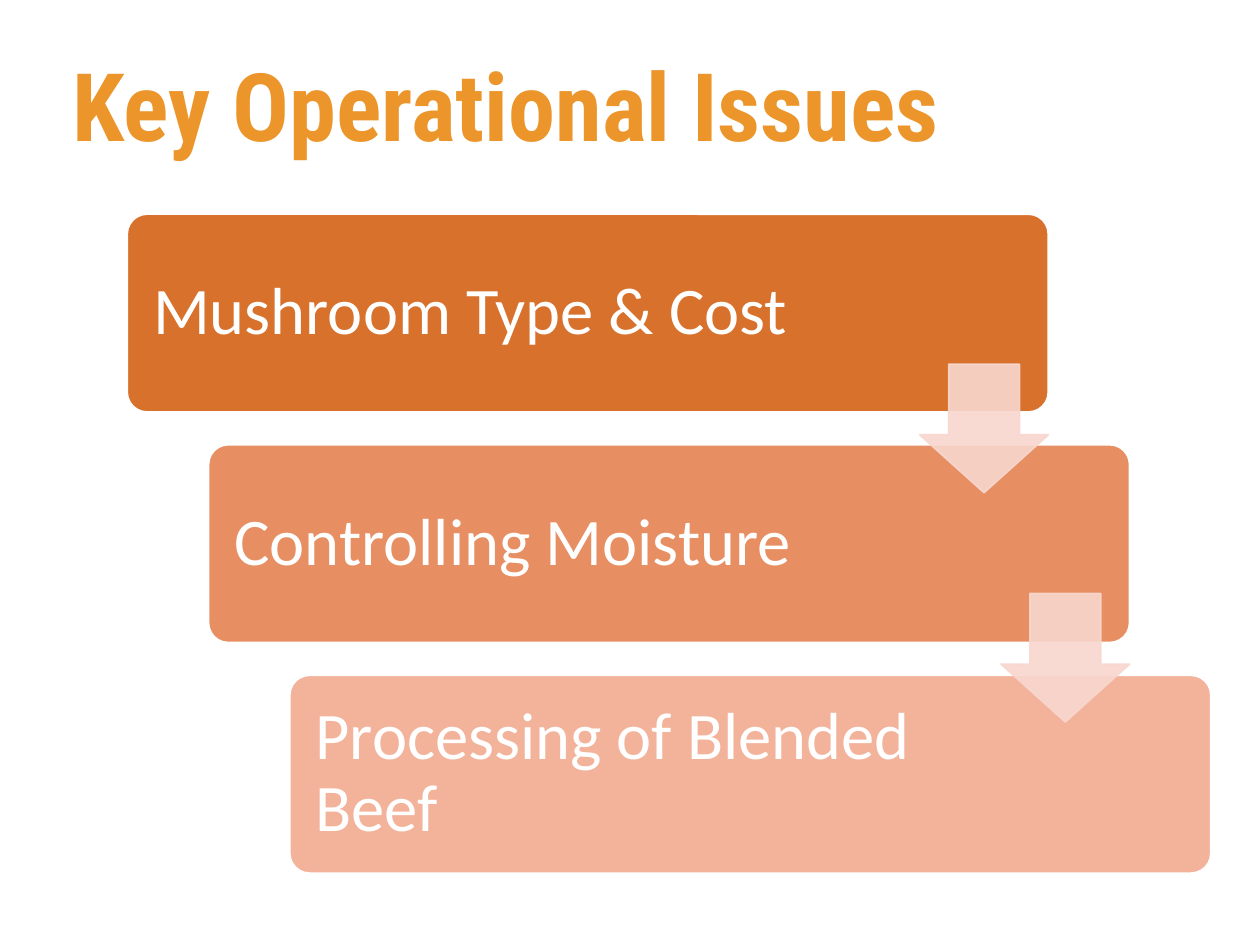
from dataclasses import dataclass

from lxml import etree
from pptx import Presentation
from pptx.dml.color import RGBColor
from pptx.enum.shapes import MSO_SHAPE
from pptx.enum.text import MSO_ANCHOR, PP_ALIGN
from pptx.oxml.ns import qn
from pptx.util import Inches, Pt

ROUND = MSO_SHAPE.ROUNDED_RECTANGLE
DOWN = MSO_SHAPE.DOWN_ARROW
MIDDLE = MSO_ANCHOR.MIDDLE
LEFT = PP_ALIGN.LEFT


@dataclass(frozen=True)
class Theme:
    title: str = "EC952A"
    text: str = "FFFFFF"
    edge: str = "FFFFFF"
    arrow: str = "F8D7CE"
    steps: tuple = ("D7712C", "E78F62", "F3B39B")
    head_font: str = "Roboto Condensed"
    body_font: str = "Calibri"
    head_size: int = 54
    body_size: int = 38


THEME = Theme()
ISSUES = ("Mushroom Type & Cost", "Controlling Moisture",
          "Processing of Blended Beef")


def add_text(slide, box, text, font, size, color, bold=False):
    frame = slide.shapes.add_textbox(*map(Inches, box)).text_frame
    frame.word_wrap = True
    frame.text = text
    para = frame.paragraphs[0]
    para.alignment = LEFT
    style = para.runs[0].font
    style.name, style.size, style.bold = font, Pt(size), bold
    style.color.rgb = RGBColor.from_string(color)
    return frame


def add_solid(slide, kind, box, fill, edge, adjust):
    shape = slide.shapes.add_shape(kind, *map(Inches, box))
    shape.shadow.inherit = False
    shape.fill.solid()
    shape.fill.fore_color.rgb = RGBColor.from_string(fill)
    shape.line.color.rgb = RGBColor.from_string(edge)
    shape.line.width = Pt(1)
    for i, value in enumerate(adjust):
        shape.adjustments[i] = value
    return shape


def add_title(slide, box):
    add_text(slide, box, "Key Operational Issues", THEME.head_font,
             THEME.head_size, THEME.title, bold=True)


def add_step(slide, box, text, fill, span):
    """Draw one card; its label takes the given width."""
    left, top, width, height = box
    add_solid(slide, ROUND, box, fill, THEME.edge, [0.1])
    pad = 0.045
    label = (left + pad, top + pad, span, height - 2 * pad)
    frame = add_text(slide, label, text, THEME.body_font,
                     THEME.body_size, THEME.text)
    frame.vertical_anchor = MIDDLE
    frame.margin_left = frame.margin_right = Inches(0.16)
    frame.margin_top = frame.margin_bottom = Inches(0.16)
    frame.paragraphs[0].line_spacing = 0.9


def add_arrow(slide, box):
    shape = add_solid(slide, DOWN, box, THEME.arrow, THEME.arrow, [0.55, 0.45])
    for color in shape._element.spPr.iter(qn("a:srgbClr")):
        etree.SubElement(color, qn("a:alpha"), val="90000")


def add_stairs(slide, box):
    """Step the cards down across the box, with arrows between them."""
    left, top, width, height = box
    card_w, card_h, side = 7.31, 1.57, 1.02
    last = len(ISSUES) - 1
    dx, dy = (width - card_w) / last, (height - card_h) / last
    for i, (text, fill) in enumerate(zip(ISSUES, THEME.steps)):
        card = (left + i * dx, top + i * dy, card_w, card_h)
        add_step(slide, card, text, fill, 5.55 if i else 5.61)
    for i in range(last):
        right = left + i * dx + card_w
        add_arrow(slide, (right - side, top + 1.19 + i * 1.82, side, side))


def main():
    deck = Presentation()
    deck.slide_width, deck.slide_height = Inches(10), Inches(7.5)
    slide = deck.slides.add_slide(deck.slide_layouts[6])
    add_stairs(slide, (1.01, 1.7, 8.6, 5.23))
    add_title(slide, (0.48, 0.32, 7.98, 1.01))
    deck.save("out.pptx")


if __name__ == "__main__":
    main()
